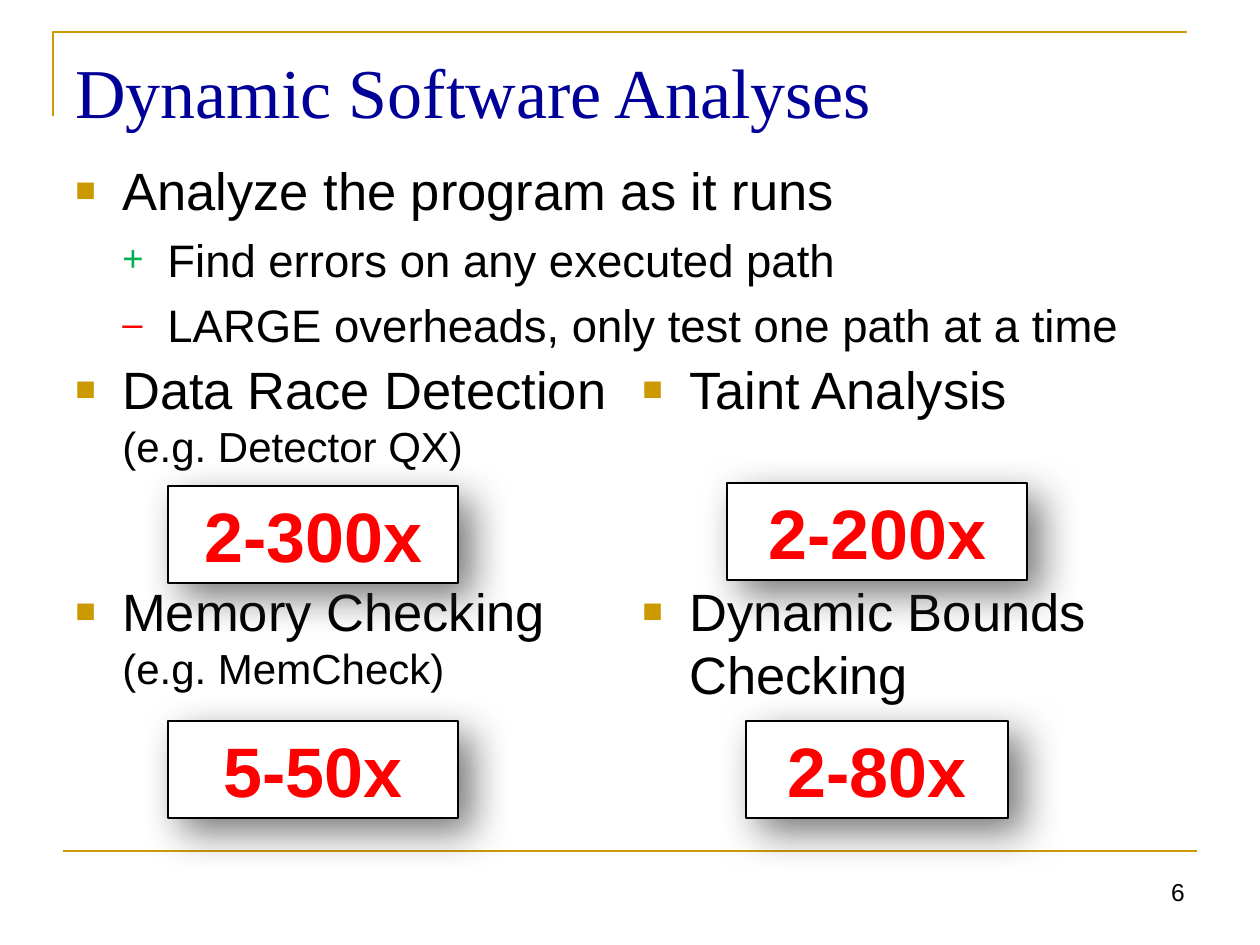
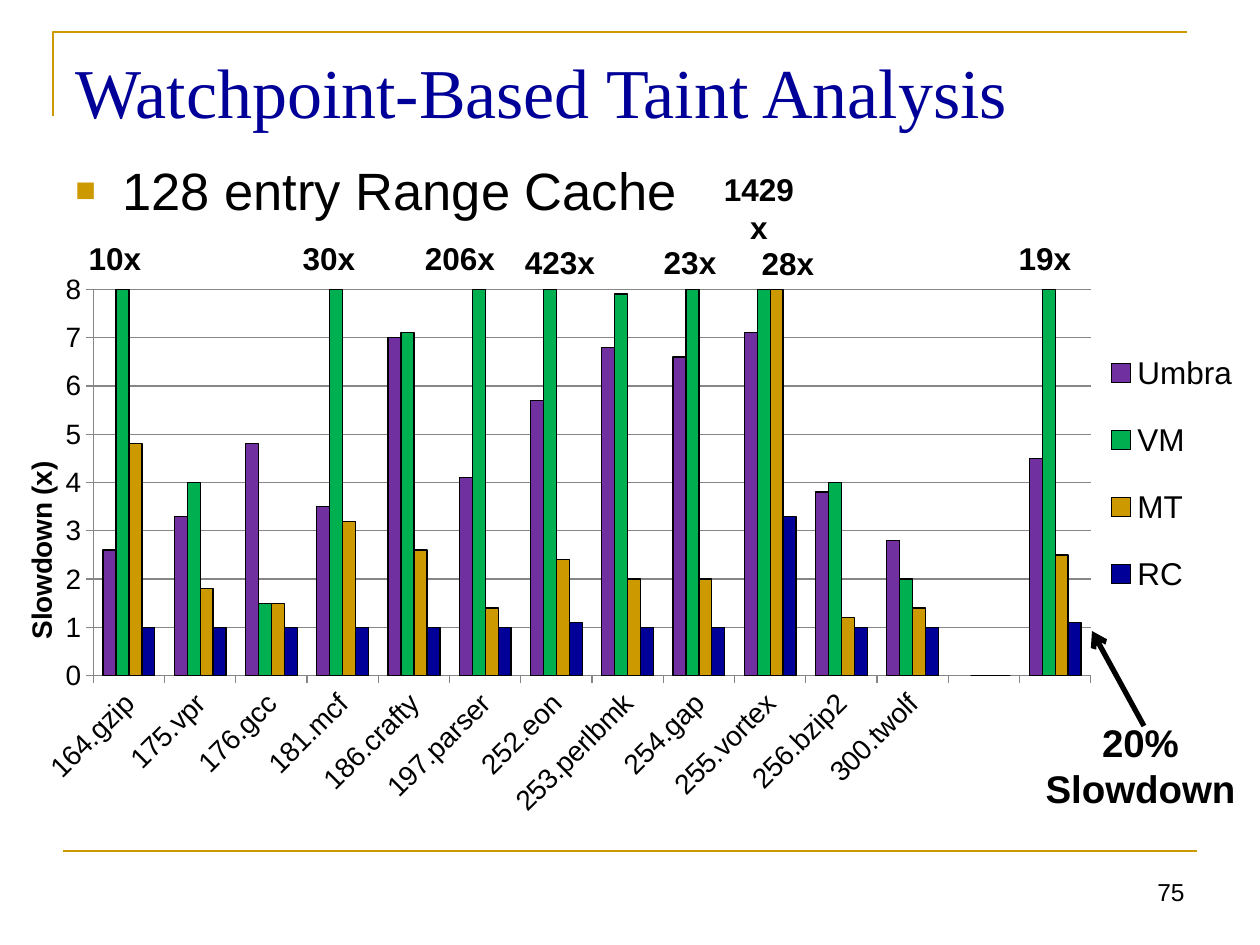
from lxml import etree
from pptx import Presentation
from pptx.chart.data import CategoryChartData
from pptx.dml.color import RGBColor
from pptx.enum.chart import XL_CHART_TYPE, XL_LEGEND_POSITION, XL_TICK_MARK
from pptx.enum.shapes import MSO_CONNECTOR, MSO_SHAPE
from pptx.enum.text import MSO_ANCHOR, PP_ALIGN
from pptx.oxml import parse_xml
from pptx.oxml.ns import nsdecls, qn
from pptx.util import Emu, Pt

COLUMNS = XL_CHART_TYPE.COLUMN_CLUSTERED
LEGEND_RIGHT = XL_LEGEND_POSITION.RIGHT
CROSS, OUTSIDE = XL_TICK_MARK.CROSS, XL_TICK_MARK.OUTSIDE
STRAIGHT = MSO_CONNECTOR.STRAIGHT
RECTANGLE = MSO_SHAPE.RECTANGLE
TOP, MIDDLE, BOTTOM = MSO_ANCHOR.TOP, MSO_ANCHOR.MIDDLE, MSO_ANCHOR.BOTTOM
LEFT, CENTER, RIGHT = PP_ALIGN.LEFT, PP_ALIGN.CENTER, PP_ALIGN.RIGHT

SCALE = 914400 / 126
COLORS = {
    "gold": "CC9900", "navy": "000099", "black": "000000", "white": "FFFFFF",
    "red": "FF0000", "green": "00B050", "purple": "7030A0", "gray": "868686",
    "shadow": "333333",
}
BODY_FONT, TITLE_FONT = "Arial", "Times New Roman"
BULLETS = {
    "square": ("■", "gold", 65, 47, 47),
    "plus": ("+", "green", 80, 92, 45),
    "minus": ("–", "red", 80, 92, 45),
}


def px(length):
    """Turn px into EMU."""
    return Emu(round(length * SCALE))


def rgb(name):
    """Look up a colour by name."""
    return RGBColor.from_string(COLORS[name])


def style_font(font, size, color="black", bold=False, name=BODY_FONT):
    """Set the look of a font."""
    font.size, font.bold, font.name = Pt(size), bold, name
    font.color.rgb = rgb(color)


def write(para, text, size=30, color="black", bold=False, font=BODY_FONT,
          align=LEFT, bullet=None, before=0):
    """Append formatted text to a paragraph."""
    para.alignment = align
    para.space_before = Pt(before)
    if bullet:
        add_bullet(para, *BULLETS[bullet])
    span = para.add_run()
    span.text = text
    style_font(span.font, size, color, bold, font)


def add_bullet(para, char, color, percent, margin, hang):
    """Give a paragraph a hanging bullet."""
    props = para._p.get_or_add_pPr()
    props.set("marL", str(px(margin)))
    props.set("indent", str(-px(hang)))
    for tag, key, value in (("buSzPct", "val", str(percent * 1000)),
                            ("buFont", "typeface", BODY_FONT),
                            ("buChar", "char", char)):
        if tag == "buSzPct":
            holder = etree.SubElement(props, qn("a:buClr"))
            etree.SubElement(holder, qn("a:srgbClr"), val=COLORS[color])
        etree.SubElement(props, qn("a:" + tag)).set(key, value)


def set_layout(parent, index, inner=False, **fractions):
    """Place a chart part by fractions of the chart."""
    for old in parent.findall(qn("c:layout")):
        parent.remove(old)
    target = '<c:layoutTarget val="inner"/>' if inner else ""
    modes = "".join(f'<c:{key}Mode val="edge"/>' for key in "xy")
    sizes = "".join(f'<c:{key} val="{value}"/>' for key, value in fractions.items())
    parent.insert(index, parse_xml(
        f'<c:layout {nsdecls("c")}><c:manualLayout>{target}{modes}{sizes}'
        "</c:manualLayout></c:layout>"))


class Deck:
    """Hold the shared style and the current slide."""

    def __init__(self):
        self.file = Presentation()
        self.file.slide_width, self.file.slide_height = px(1260), px(945)
        self.page = None

    def add_page(self, title, number):
        """Start a slide with its frame, title and number."""
        self.page = self.file.slides.add_slide(self.file.slide_layouts[6])
        builder = self.page.shapes.build_freeform(53, 116, scale=SCALE)
        builder.add_line_segments([(53, 32), (1187, 32)], close=False)
        corner = builder.convert_to_shape()
        corner.shadow.inherit = False
        corner.fill.background()
        corner.line.color.rgb, corner.line.width = rgb("gold"), Pt(1.5)
        self.line(63, 851, 1197, 851, "gold", 1.5)
        write(self.box(63, 47, 1134, 88, MIDDLE).paragraphs[0], title,
              size=40, color="navy", font=TITLE_FONT)
        write(self.box(903, 871, 294, 64).paragraphs[0], number, size=14, align=RIGHT)

    def box(self, left, top, width, height, anchor=TOP):
        """Add a wrapping text box and return its frame."""
        frame = self.page.shapes.add_textbox(
            px(left), px(top), px(width), px(height)).text_frame
        frame.word_wrap, frame.vertical_anchor = True, anchor
        return frame

    def line(self, x1, y1, x2, y2, color, width, arrow=False):
        """Add a straight line, with an arrowhead if asked."""
        line = self.page.shapes.add_connector(STRAIGHT, px(x1), px(y1), px(x2), px(y2))
        line.line.color.rgb, line.line.width = rgb(color), Pt(width)
        if arrow:
            etree.SubElement(line.line._get_or_add_ln(), qn("a:tailEnd"), type="arrow")
        etree.SubElement(line._element.spPr, qn("a:effectLst"))

    def bullets(self, left, top, width, height, items):
        """Add a list of (text, format) bullets."""
        frame = self.box(left, top, width, height)
        for index, (text, style) in enumerate(items):
            para = frame.add_paragraph() if index else frame.paragraphs[0]
            write(para, text, before=6 if index else 0, **style)
        return frame

    def analysis(self, left, top, name, example=None):
        """Add one kind of analysis with an optional example below."""
        frame = self.bullets(left, top, 567, 140, [(name, {"bullet": "square"})])
        if example:
            para = frame.paragraphs[0]
            para.add_line_break()
            write(para, example, size=24)

    def overhead(self, left, top, width, text):
        """Add a shadowed card with an overhead figure."""
        card = self.page.shapes.add_shape(RECTANGLE, px(left), px(top), px(width), px(97))
        card.fill.solid()
        card.fill.fore_color.rgb = rgb("white")
        card.line.color.rgb, card.line.width = rgb("black"), Pt(0.75)
        card.shadow.inherit = False
        effects = card._element.spPr.find(qn("a:effectLst"))
        shadow = etree.SubElement(
            effects, qn("a:outerShdw"), blurRad=str(Pt(23)), dist=str(Pt(11)),
            dir="2700000", algn="tl", rotWithShape="0")
        tint = etree.SubElement(shadow, qn("a:srgbClr"), val=COLORS["shadow"])
        etree.SubElement(tint, qn("a:alpha"), val="65000")
        write(card.text_frame.paragraphs[0], text, size=40, color="red",
              bold=True, align=CENTER)

    def label(self, middle, bottom, text):
        """Add a bold figure above a clipped bar."""
        frame = self.box(middle - 56, bottom - 72, 112, 72, BOTTOM)
        write(frame.paragraphs[0], text, size=18, bold=True, align=CENTER)

    def chart(self, left, top, width, height, categories, series):
        """Add the slowdown column chart."""
        data = CategoryChartData()
        data.categories = categories
        for name, _, values in series:
            data.add_series(name, values)
        chart = self.page.shapes.add_chart(
            COLUMNS, px(left), px(top), px(width), px(height), data).chart
        style_font(chart.font, 14, bold=True)
        chart.has_title = False
        plot = chart.plots[0]
        plot.gap_width, plot.overlap, plot.vary_by_categories = 150, 0, False
        for bars, (_, color, _) in zip(plot.series, series):
            bars.format.fill.solid()
            bars.format.fill.fore_color.rgb = rgb(color)
            bars.format.line.color.rgb = rgb("black")
            bars.format.line.width = Pt(0.75)
            bars.invert_if_negative = False
        across, up = chart.category_axis, chart.value_axis
        for axis in (across, up):
            style_font(axis.tick_labels.font, 16)
            axis.format.line.color.rgb = rgb("gray")
        across.major_tick_mark, up.major_tick_mark = OUTSIDE, CROSS
        across._element.find(qn("c:txPr")).find(qn("a:bodyPr")).set("rot", "-2700000")
        up.minimum_scale, up.maximum_scale, up.major_unit = 0, 8, 1
        up.major_gridlines.format.line.color.rgb = rgb("gray")
        write(up.axis_title.text_frame.paragraphs[0], "Slowdown (x)", size=16, bold=True)
        set_layout(up.axis_title._element, 1, x=0.01, y=0.32)
        chart.has_legend = True
        chart.legend.position = LEGEND_RIGHT
        chart.legend.include_in_layout = False
        style_font(chart.legend.font, 18)
        set_layout(chart.legend._element, 1, x=0.88, y=0.09, w=0.11, h=0.52)
        set_layout(chart._chartSpace.chart.plotArea, 0, inner=True,
                   x=0.07, y=0.03, w=0.8, h=0.67)


def add_analyses(deck):
    """Build the overview of dynamic analyses."""
    deck.add_page("Dynamic Software Analyses", "6")
    deck.analysis(63, 351, "Data Race Detection", "(e.g. Detector QX)")
    deck.analysis(63, 573, "Memory Checking", "(e.g. MemCheck)")
    deck.analysis(630, 351, "Taint Analysis")
    deck.analysis(630, 573, "Dynamic Bounds Checking")
    for left, top, width, text in (
            (727, 483, 300, "2-200x"), (746, 721, 262, "2-80x"),
            (168, 721, 290, "5-50x"), (168, 486, 290, "2-300x")):
        deck.overhead(left, top, width, text)
    deck.bullets(63, 152, 1134, 216, [
        ("Analyze the program as it runs", {"bullet": "square"}),
        ("Find errors on any executed path", {"bullet": "plus", "size": 26}),
        ("LARGE overheads, only test one path at a time", {"bullet": "minus", "size": 26}),
    ])


def add_taint_results(deck):
    """Build the slowdown results."""
    deck.add_page("Watchpoint-Based Taint Analysis", "75")
    deck.bullets(63, 152, 1134, 90, [("128 entry Range Cache", {"bullet": "square"})])
    categories = [
        "164.gzip", "175.vpr", "176.gcc", "181.mcf", "186.crafty", "197.parser",
        "252.eon", "253.perlbmk", "254.gap", "255.vortex", "256.bzip2", "300.twolf",
        "", ""]
    deck.chart(6, 272, 1247, 577, categories, [
        ("Umbra", "purple",
         [2.6, 3.3, 4.8, 3.5, 7, 4.1, 5.7, 6.8, 6.6, 7.1, 3.8, 2.8, None, 4.5]),
        ("VM", "green",
         [10.1, 4, 1.5, 29.8, 7.1, 206.1, 423.2, 7.9, 23.3, 1429.4, 4, 2, 0, 19]),
        ("MT", "gold",
         [4.8, 1.8, 1.5, 3.2, 2.6, 1.4, 2.4, 2, 2, 28.2, 1.2, 1.4, 0, 2.5]),
        ("RC", "navy", [1, 1, 1, 1, 1, 1, 1.1, 1, 1, 3.3, 1, 1, 0, 1.1]),
    ])
    for middle, bottom, text in (
            (115, 283, "10x"), (329, 283, "30x"), (460, 283, "206x"),
            (560, 287, "423x"), (690, 287, "23x"), (759, 252, "1429x"),
            (788, 288, "28x"), (1045, 283, "19x")):
        deck.label(middle, bottom, text)
    frame = deck.box(1024, 713, 233, 136)
    for para, text in zip((frame.paragraphs[0], frame.add_paragraph()), ("20%", "Slowdown")):
        write(para, text, size=22, bold=True, align=CENTER)
    deck.line(1144, 726, 1092, 631, "black", 3, arrow=True)


def main():
    """Build and save the deck."""
    deck = Deck()
    add_analyses(deck)
    add_taint_results(deck)
    deck.file.save("out.pptx")


if __name__ == "__main__":
    main()
